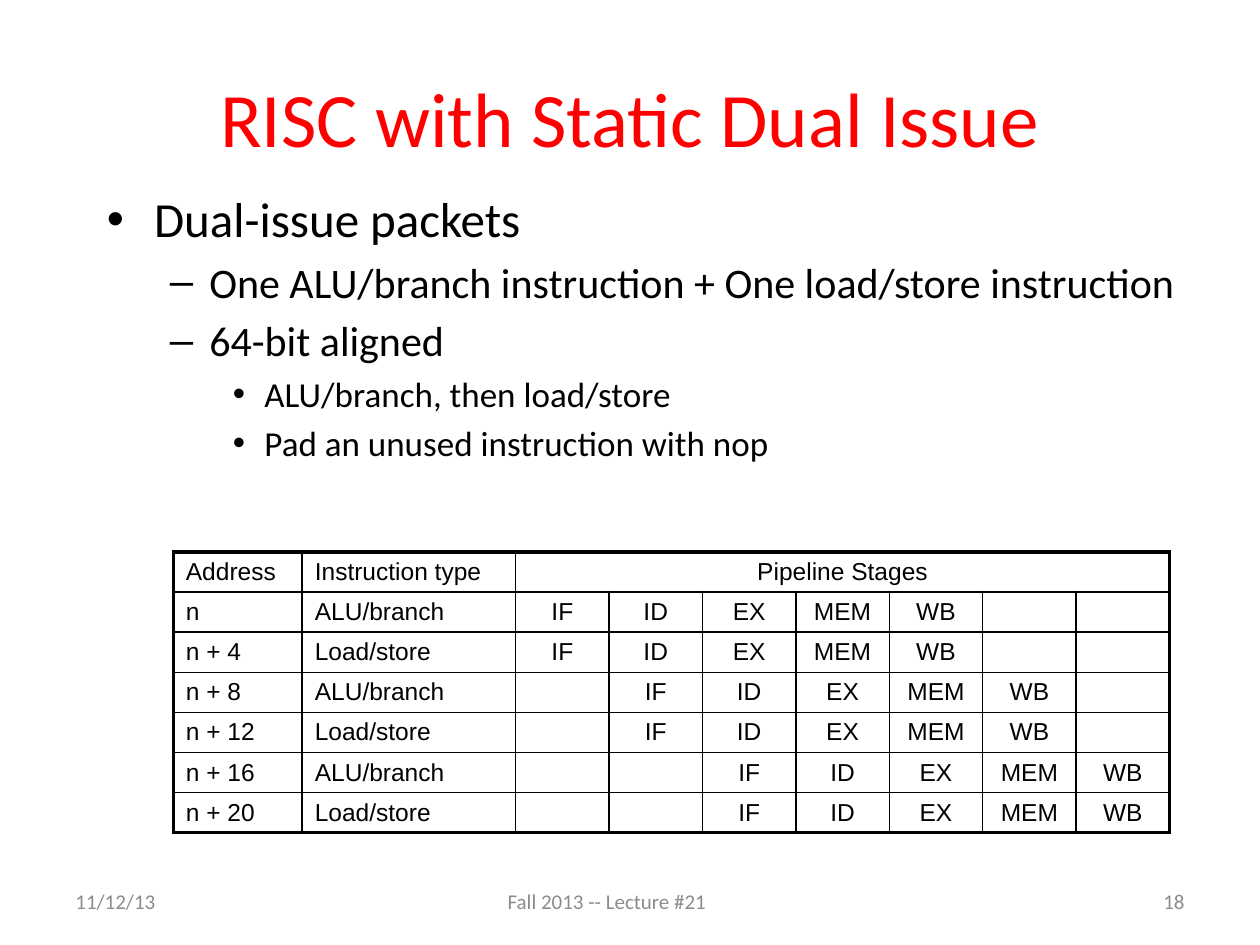
"""Build a slide on static dual issue with a pipeline stage table."""
from dataclasses import dataclass

from lxml import etree
from pptx import Presentation
from pptx.dml.color import RGBColor
from pptx.enum.text import MSO_ANCHOR, PP_ALIGN
from pptx.oxml.ns import qn
from pptx.util import Pt

LEFT, CENTER, RIGHT = PP_ALIGN.LEFT, PP_ALIGN.CENTER, PP_ALIGN.RIGHT
TOP, MIDDLE = MSO_ANCHOR.TOP, MSO_ANCHOR.MIDDLE


@dataclass(frozen=True)
class Theme:
    heading_font: str = "Calibri"
    table_font: str = "Arial"
    red: str = "FF0000"
    black: str = "000000"
    gray: str = "8C8C8C"
    title_size: float = 44
    body_sizes: tuple[float, ...] = (28, 24, 20)
    table_size: float = 14
    footer_size: float = 12
    outer_line: float = 2.25
    header_line: float = 1.5
    inner_line: float = 1


@dataclass(frozen=True)
class Box:
    left: float
    top: float
    width: float
    height: float

    def lengths(self) -> tuple[Pt, ...]:
        return Pt(self.left), Pt(self.top), Pt(self.width), Pt(self.height)


@dataclass(frozen=True)
class BulletLevel:
    mark: str
    margin: float
    hanging: float


@dataclass(frozen=True)
class Footer:
    text: str
    left: float
    alignment: PP_ALIGN


@dataclass(frozen=True)
class Instruction:
    address: str
    kind: str
    delay: int


THEME = Theme()
BULLET_LEVELS = (
    BulletLevel("•", 27, 27),
    BulletLevel("–", 58.5, 22.5),
    BulletLevel("•", 90, 18),
)
BULLETS = (
    (0, "Dual-issue packets"),
    (1, "One ALU/branch instruction + One load/store instruction"),
    (1, "64-bit aligned"),
    (2, "ALU/branch, then load/store"),
    (2, "Pad an unused instruction with nop"),
)
FOOTERS = (
    Footer("11/12/13", 36, LEFT),
    Footer("Fall 2013 -- Lecture #21", 283, LEFT),
    Footer("18", 516, RIGHT),
)
STAGES = ("IF", "ID", "EX", "MEM", "WB")
STAGE_COLUMNS = 7
INSTRUCTIONS = tuple(
    Instruction(
        f"n + {4 * index}" if index else "n",
        "Load/store" if index % 2 else "ALU/branch",
        index // 2,
    )
    for index in range(6)
)
COLUMN_WIDTHS = (73.7, 122) + (53.4,) * STAGE_COLUMNS
ROW_HEIGHT = 22.95


def write_text(paragraph, text: str, *, size: float, font: str = THEME.heading_font,
               color: str = THEME.black, alignment: PP_ALIGN = LEFT,
               space_before: float = 0) -> None:
    """Fill a paragraph with formatted text."""
    paragraph.alignment = alignment
    paragraph.space_before = Pt(space_before)
    if not text:
        paragraph._p.get_or_add_endParaRPr().set("sz", str(int(size * 100)))
        return
    run = paragraph.add_run()
    run.text = text
    run.font.name = font
    run.font.size = Pt(size)
    run.font.color.rgb = RGBColor.from_string(color)


def add_text_frame(slide, box: Box, anchor: MSO_ANCHOR = MIDDLE):
    """Add a wrapping text box and return its text frame."""
    text_frame = slide.shapes.add_textbox(*box.lengths()).text_frame
    text_frame.word_wrap = True
    text_frame.vertical_anchor = anchor
    return text_frame


def set_bullet(paragraph, level: BulletLevel) -> None:
    """Give a paragraph its bullet mark and hanging indent."""
    properties = paragraph._p.get_or_add_pPr()
    properties.set("marL", str(Pt(level.margin)))
    properties.set("indent", str(-Pt(level.hanging)))
    etree.SubElement(properties, qn("a:buFont"), typeface="Arial")
    etree.SubElement(properties, qn("a:buChar"), char=level.mark)


def add_bullets(slide, box: Box) -> None:
    """Add the bulleted body text."""
    text_frame = add_text_frame(slide, box, TOP)
    for index, (depth, text) in enumerate(BULLETS):
        paragraph = text_frame.add_paragraph() if index else text_frame.paragraphs[0]
        size = THEME.body_sizes[depth]
        write_text(paragraph, text, size=size, space_before=size * 0.2)
        paragraph.level = depth
        set_bullet(paragraph, BULLET_LEVELS[depth])


def set_borders(cell, widths: dict[str, float]) -> None:
    """Draw solid cell borders, keyed by side in schema order."""
    properties = cell._tc.get_or_add_tcPr()
    for position, (side, width) in enumerate(widths.items()):
        line = etree.Element(qn(f"a:ln{side}"), w=str(Pt(width)))
        fill = etree.SubElement(line, qn("a:solidFill"))
        etree.SubElement(fill, qn("a:srgbClr"), val=THEME.black)
        properties.insert(position, line)


def pipeline_rows() -> list[list[str]]:
    """Return the table text, each stage sequence shifted by its delay."""
    rows = [["Address", "Instruction type", "Pipeline Stages"] + [""] * (STAGE_COLUMNS - 1)]
    for instruction in INSTRUCTIONS:
        trailing = STAGE_COLUMNS - len(STAGES) - instruction.delay
        rows.append([instruction.address, instruction.kind,
                     *[""] * instruction.delay, *STAGES, *[""] * trailing])
    return rows


def add_pipeline_table(slide, left: float, top: float) -> None:
    """Add the pipeline stage table."""
    rows = pipeline_rows()
    last_row, last_column = len(rows) - 1, len(COLUMN_WIDTHS) - 1
    box = Box(left, top, sum(COLUMN_WIDTHS), ROW_HEIGHT * len(rows))
    table = slide.shapes.add_table(len(rows), len(COLUMN_WIDTHS), *box.lengths()).table
    table.first_row = table.horz_banding = False
    for column, width in zip(table.columns, COLUMN_WIDTHS):
        column.width = Pt(width)
    table.cell(0, 2).merge(table.cell(0, last_column))
    outer, header, inner = THEME.outer_line, THEME.header_line, THEME.inner_line
    for row, texts in enumerate(rows):
        table.rows[row].height = Pt(ROW_HEIGHT)
        for column, text in enumerate(texts):
            cell = table.cell(row, column)
            cell.margin_top = cell.margin_bottom = Pt(3)
            cell.vertical_anchor = MIDDLE
            cell.fill.background()
            write_text(cell.text_frame.paragraphs[0], text, size=THEME.table_size,
                       font=THEME.table_font, alignment=CENTER if column > 1 else LEFT)
            at_right = column == last_column or cell.is_merge_origin
            set_borders(cell, {
                "L": inner if column else outer,
                "R": outer if at_right else inner,
                "T": {0: outer, 1: header}.get(row, inner),
                "B": {0: header, last_row: outer}.get(row, inner),
            })


def main() -> None:
    """Build and save the presentation."""
    presentation = Presentation()
    presentation.slide_width, presentation.slide_height = Pt(720), Pt(540)
    slide = presentation.slides.add_slide(presentation.slide_layouts[6])
    title = add_text_frame(slide, Box(36, 21.6, 648, 90))
    write_text(title.paragraphs[0], "RISC with Static Dual Issue",
               size=THEME.title_size, color=THEME.red, alignment=CENTER)
    add_bullets(slide, Box(54, 104.4, 651.6, 217.4))
    add_pipeline_table(slide, 99, 315.36)
    for footer in FOOTERS:
        text_frame = add_text_frame(slide, Box(footer.left, 500.5, 168, 28.8))
        write_text(text_frame.paragraphs[0], footer.text, size=THEME.footer_size,
                   color=THEME.gray, alignment=footer.alignment)
    presentation.save("out.pptx")


if __name__ == "__main__":
    main()
